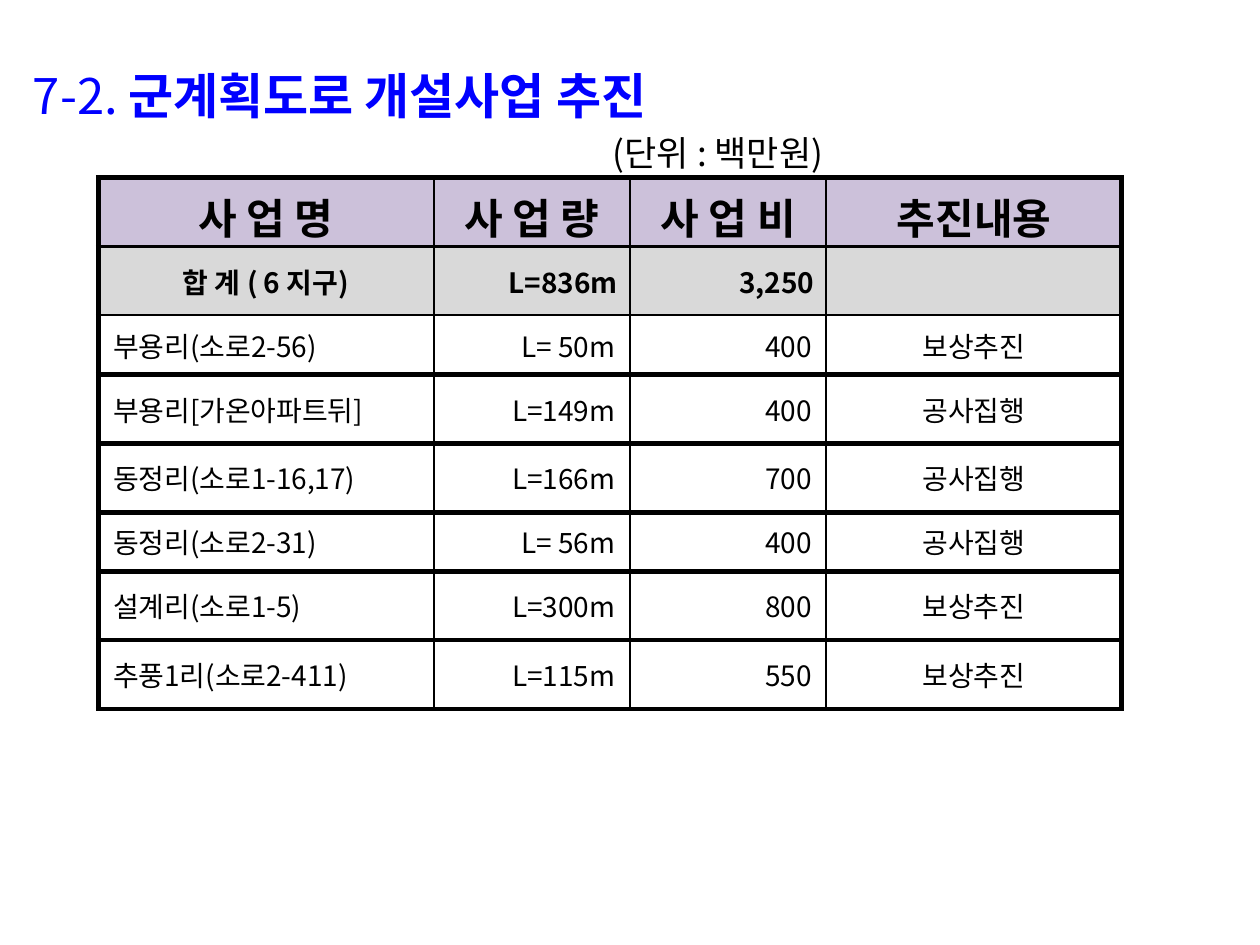
from dataclasses import dataclass
from lxml.etree import SubElement
from pptx import Presentation
from pptx.dml.color import RGBColor
from pptx.enum.text import MSO_ANCHOR, MSO_AUTO_SIZE, PP_ALIGN
from pptx.oxml import parse_xml
from pptx.oxml.ns import nsdecls, qn
from pptx.util import Cm, Pt


@dataclass(frozen=True)
class Theme:
    font: str = "Noto Sans CJK KR"
    blue: str = "0000FF"
    black: str = "000000"
    white: str = "FFFFFF"
    lilac: str = "CCC1DA"
    gray: str = "D9D9D9"
    title: float = 28
    head: float = 24
    unit: float = 20
    body: float = 16
    thick: float = 3
    thin: float = 1.4


@dataclass(frozen=True)
class Band:
    """Look shared by all cells of a table row."""
    size: float
    bold: bool
    fill: str
    inset: float
    top: float
    base: float
    aligns: tuple


@dataclass(frozen=True)
class Row:
    band: Band
    height: float
    texts: tuple


T = Theme()
LEFT, MID, RIGHT = PP_ALIGN.LEFT, PP_ALIGN.CENTER, PP_ALIGN.RIGHT
HEAD = Band(T.head, True, T.lilac, 0.25, 0.15, 0, (MID,) * 4)
SUM = Band(T.body, True, T.gray, 0.25, 0.13, 0.13, (MID, RIGHT, RIGHT, MID))
ITEM = Band(T.body, False, T.white, 0.3, 0.13, 0.13,
            (LEFT, RIGHT, RIGHT, MID))
TALL, LOW = 1.39, 1.19
COLS = (6.76, 3.96, 3.96, 5.95)
ROWS = (
    Row(HEAD, TALL, ("사 업 명", "사 업 량", "사 업 비", "추진내용")),
    Row(SUM, TALL, ("합 계 ( 6 지구)", "L=836m", "3,250", "")),
    Row(ITEM, LOW, ("부용리(소로2-56)", "L= 50m", "400", "보상추진")),
    Row(ITEM, TALL, ("부용리[가온아파트뒤]", "L=149m", "400", "공사집행")),
    Row(ITEM, TALL, ("동정리(소로1-16,17)", "L=166m", "700", "공사집행")),
    Row(ITEM, LOW, ("동정리(소로2-31)", "L= 56m", "400", "공사집행")),
    Row(ITEM, TALL, ("설계리(소로1-5)", "L=300m", "800", "보상추진")),
    Row(ITEM, TALL, ("추풍1리(소로2-411)", "L=115m", "550", "보상추진")),
)


def add_run(para, text: str, size: float, color: str, bold: bool) -> None:
    run = para.add_run()
    run.text = text
    for key, val in dict(name=T.font, size=Pt(size), bold=bold).items():
        setattr(run.font, key, val)
    run.font.color.rgb = RGBColor.from_string(color)
    props = run.font._element
    props.set("kern", "0")
    SubElement(props, qn("a:ea"), typeface=T.font)


def set_edge(cell, side: str, width: float) -> None:
    cell._tc.get_or_add_tcPr().append(parse_xml(
        f'<a:ln{side} {nsdecls("a")} w="{Pt(width)}"><a:solidFill>'
        f'<a:srgbClr val="{T.black}"/></a:solidFill></a:ln{side}>'))


def draw_title(slide) -> None:
    title = slide.shapes.title
    box = dict(left=0.41, top=1.19, width=24.2, height=2.49)
    for key, val in box.items():
        setattr(title, key, Cm(val))
    frame = title.text_frame
    form = dict(word_wrap=True, auto_size=MSO_AUTO_SIZE.NONE,
                vertical_anchor=MSO_ANCHOR.TOP)
    for key, val in form.items():
        setattr(frame, key, val)
    name, unit = frame.paragraphs[0], frame.add_paragraph()
    for para in (name, unit):
        para.alignment = LEFT
    add_run(name, "7-2. ", T.title, T.blue, False)
    add_run(name, "군계획도로 개설사업 추진", T.title, T.blue, True)
    # The unit note is indented to sit above the table's right half
    unit.space_before = Pt(4)
    unit._p.get_or_add_pPr().set("marL", str(Cm(11.69)))
    add_run(unit, "(단위 : 백만원)", T.unit, T.black, False)


def draw_cell(cell, row: Row, r: int, c: int) -> None:
    # Outer frame and item rules are thick, the rest thin
    heavy = dict(L=c == 0, R=c == len(COLS) - 1,
                 T=r == 0 or r > 2, B=r > 1)
    for side, on in heavy.items():
        set_edge(cell, side, T.thick if on else T.thin)
    band = row.band
    cell.fill.solid()
    cell.fill.fore_color.rgb = RGBColor.from_string(band.fill)
    form = dict(vertical_anchor=MSO_ANCHOR.MIDDLE,
                margin_left=Cm(band.inset), margin_right=Cm(band.inset),
                margin_top=Cm(band.top), margin_bottom=Cm(band.base))
    for key, val in form.items():
        setattr(cell, key, val)
    para = cell.text_frame.paragraphs[0]
    para.alignment = band.aligns[c]
    if row.texts[c]:
        add_run(para, row.texts[c], band.size, T.black, band.bold)


def draw_table(slide) -> None:
    high = sum(row.height for row in ROWS)
    table = slide.shapes.add_table(
        len(ROWS), len(COLS), Cm(1.98), Cm(3.58),
        Cm(sum(COLS)), Cm(high)).table
    table.first_row = table.horz_banding = False
    for col, width in zip(table.columns, COLS):
        col.width = Cm(width)
    for r, row in enumerate(ROWS):
        table.rows[r].height = Cm(row.height)
        for c in range(len(COLS)):
            draw_cell(table.cell(r, c), row, r, c)


def main() -> None:
    deck = Presentation()
    deck.slide_width, deck.slide_height = Cm(25.4), Cm(19.05)
    slide = deck.slides.add_slide(deck.slide_layouts[5])
    draw_title(slide)
    draw_table(slide)
    deck.save("out.pptx")


if __name__ == "__main__":
    main()
